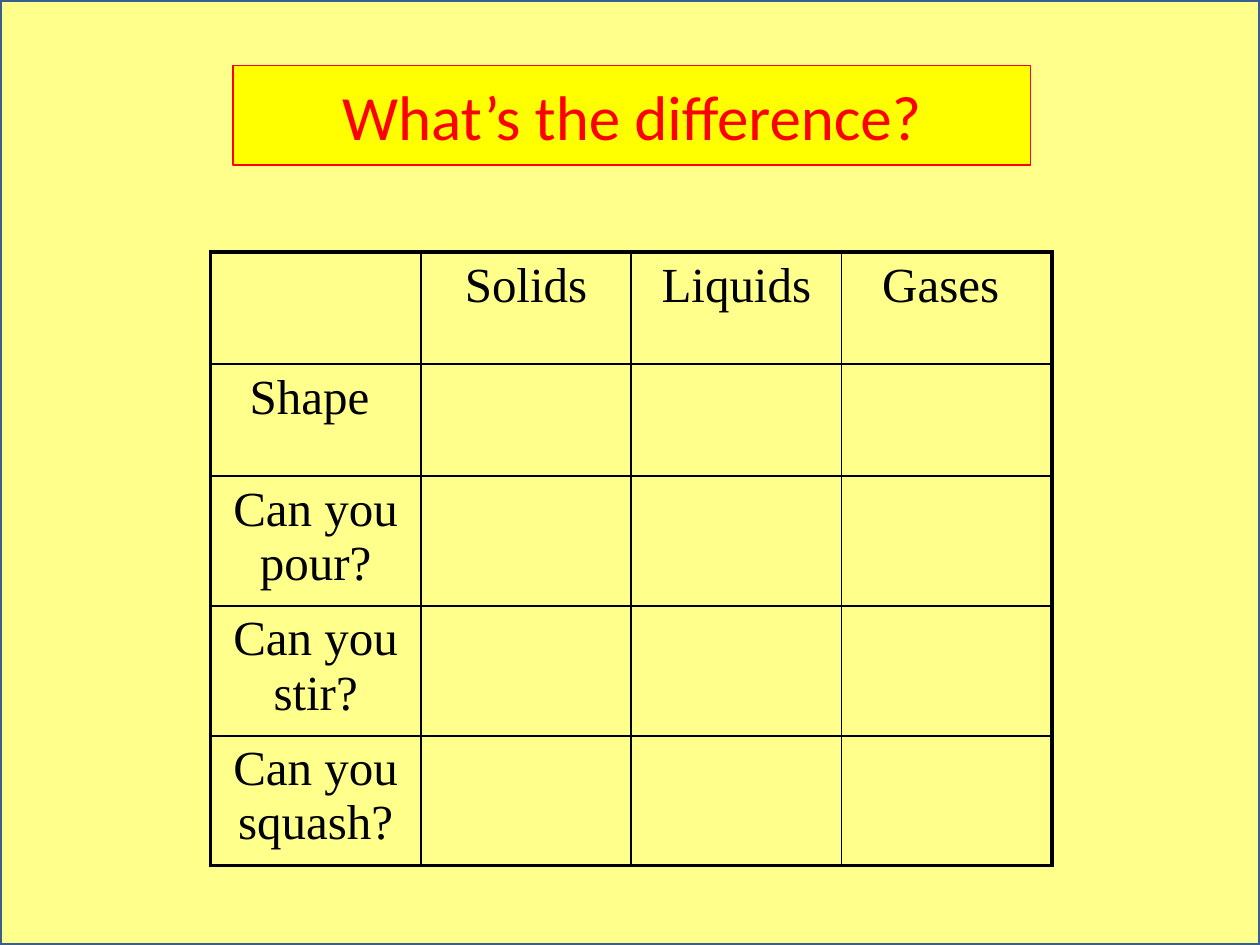
from lxml.etree import SubElement
from pptx import Presentation
from pptx.dml.color import RGBColor
from pptx.enum.shapes import MSO_SHAPE
from pptx.enum.text import MSO_ANCHOR, PP_ALIGN
from pptx.oxml.ns import qn
from pptx.util import Inches, Pt

COLORS = {
    "background": "FFFF99",
    "panel": "FFFF8B",
    "frame": "3A5F8C",
    "banner": "FFFF00",
    "title": "FF0000",
    "ink": "000000",
}
HEADINGS = ["", "Solids", "Liquids", "Gases "]
QUESTIONS = ["Shape ", "Can you pour?", "Can you stir?", "Can you squash?"]
ROW_HEIGHTS = [0.89, 0.89, 1.03, 1.03, 1.03]
COLUMN_WIDTH = 1.67
INNER_LINE, OUTER_LINE = 1, 2.25


def color(name):
    return RGBColor.from_string(COLORS[name])


def add_box(page, left, top, width, height, fill, line, line_width):
    box = page.shapes.add_shape(
        MSO_SHAPE.RECTANGLE, Inches(left), Inches(top), Inches(width), Inches(height)
    )
    box.shadow.inherit = False
    box.fill.solid()
    box.fill.fore_color.rgb = color(fill)
    box.line.color.rgb = color(line)
    box.line.width = Pt(line_width)
    return box


def write(frame, text, size, font, ink):
    para = frame.paragraphs[0]
    para.text = text
    para.alignment = PP_ALIGN.CENTER
    para.font.size = Pt(size)
    para.font.name = font
    para.font.color.rgb = color(ink)


def add_title(page, text):
    banner = add_box(page, 1.85, 0.52, 6.33, 0.79, "banner", "title", 0.75)
    banner.text_frame.word_wrap = True
    banner.text_frame.vertical_anchor = MSO_ANCHOR.MIDDLE
    write(banner.text_frame, text, 36, "Calibri", "title")


def set_border(cell, side, width):
    properties = cell._tc.get_or_add_tcPr()
    line = SubElement(properties, qn(f"a:ln{side}"), w=str(Pt(width)))
    fill = SubElement(line, qn("a:solidFill"))
    SubElement(fill, qn("a:srgbClr"), val=COLORS["ink"])


def style_cell(cell, outer_sides):
    for side in "LRTB":
        set_border(cell, side, OUTER_LINE if side in outer_sides else INNER_LINE)
    cell.fill.background()


def add_comparison_table(page):
    row_count, column_count = len(ROW_HEIGHTS), len(HEADINGS)
    table = page.shapes.add_table(
        row_count, column_count, Inches(1.67), Inches(2),
        Inches(COLUMN_WIDTH * column_count), Inches(sum(ROW_HEIGHTS)),
    ).table
    table.first_row = False
    table.horz_banding = False
    for column in table.columns:
        column.width = Inches(COLUMN_WIDTH)
    for row, height in zip(table.rows, ROW_HEIGHTS):
        row.height = Inches(height)

    contents = [HEADINGS] + [[question, "", "", ""] for question in QUESTIONS]
    for r, texts in enumerate(contents):
        for c, text in enumerate(texts):
            cell = table.cell(r, c)
            edges = {"L": c == 0, "R": c == column_count - 1,
                     "T": r == 0, "B": r == row_count - 1}
            style_cell(cell, [side for side, outer in edges.items() if outer])
            if text:
                write(cell.text_frame, text, 28, "Times New Roman", "ink")


def main():
    deck = Presentation()
    deck.slide_width = Inches(10)
    deck.slide_height = Inches(7.5)
    page = deck.slides.add_slide(deck.slide_layouts[6])
    page.background.fill.solid()
    page.background.fill.fore_color.rgb = color("background")
    add_box(page, 0, 0, 10, 7.5, "panel", "frame", 2)
    add_title(page, "What’s the difference?")
    add_comparison_table(page)
    deck.save("out.pptx")


if __name__ == "__main__":
    main()
